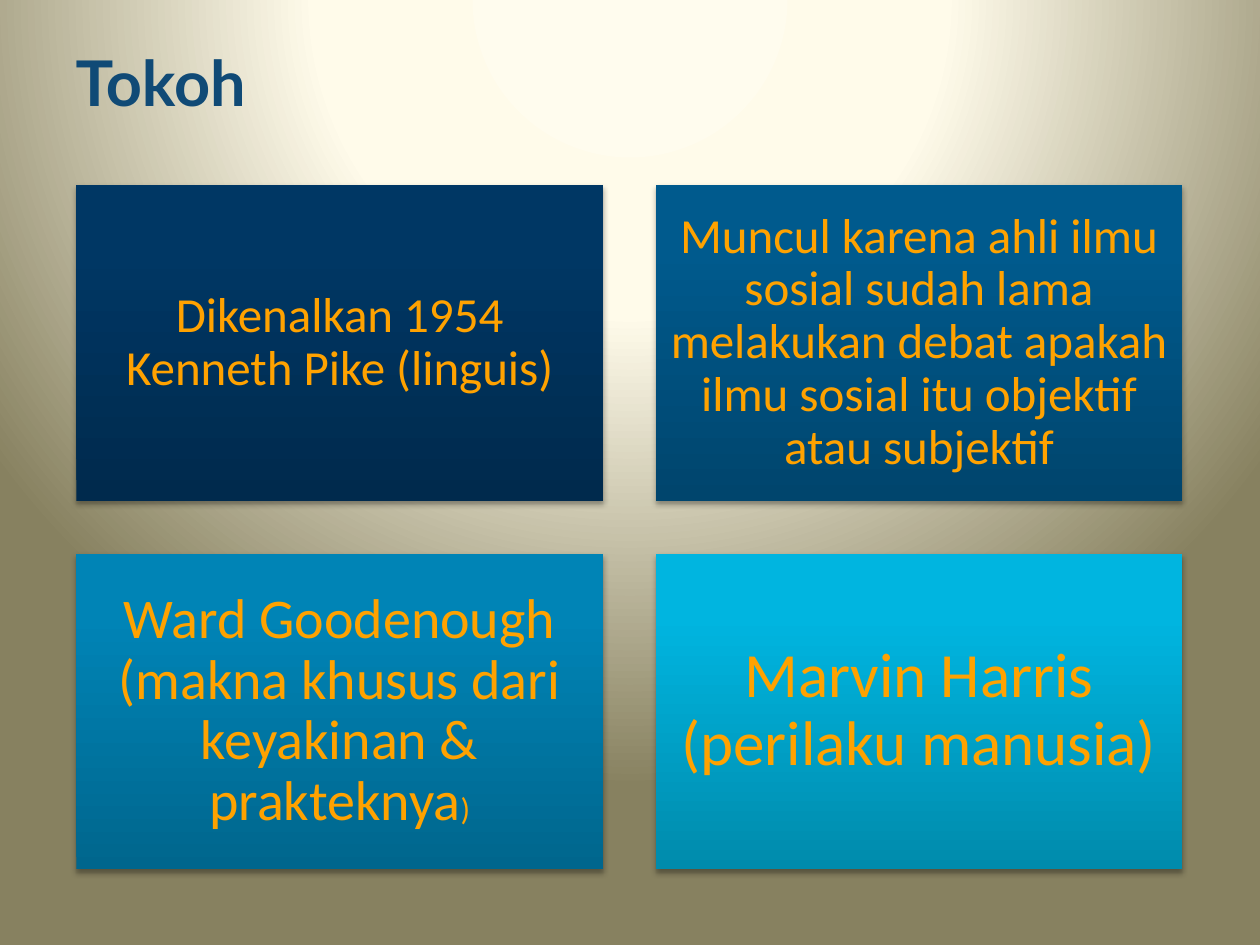
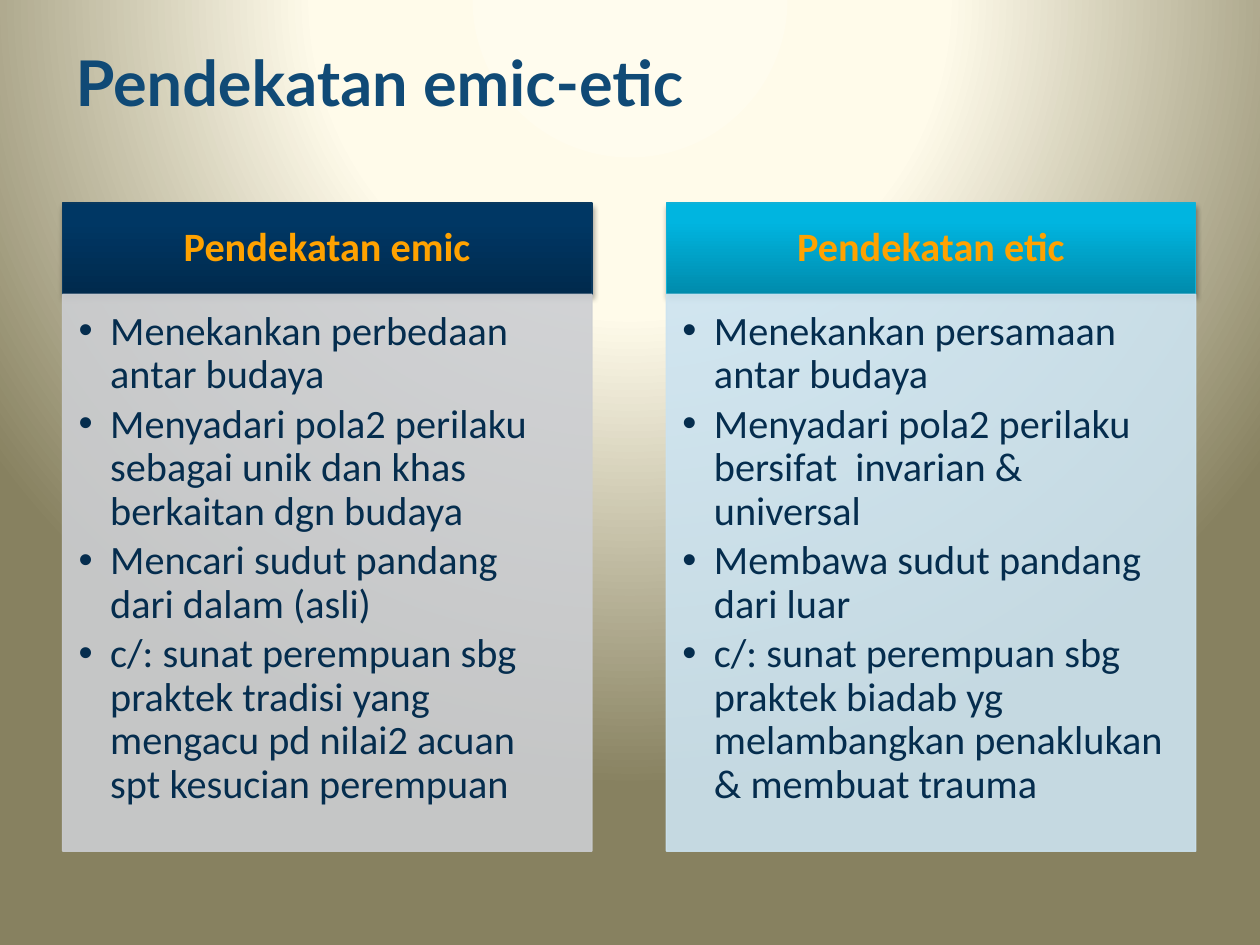
from dataclasses import dataclass
from itertools import product
from typing import Any

from lxml import etree
from pptx import Presentation
from pptx import util as u
from pptx.dml.color import RGBColor
from pptx.enum import shapes, text
from pptx.oxml.ns import qn

NAVY = ((0, "002A4D"), (80, "003764"), (100, "003764"))
BLUE = ((0, "00456D"), (80, "005A8D"), (100, "005B8E"))
AZURE = ((0, "00668D"), (80, "0084B6"), (100, "0085B7"))
CYAN = ((0, "008BAC"), (80, "00B5E0"), (100, "00B6E1"))
GLOW = ((0, "FFFCEE"), (40, "FFFBEA"), (100, "878160"))
ORANGE, INK, TITLE_BLUE = "FFA200", "052D4E", "104A76"
BODY_SIZE = 23
Stops = tuple[tuple[int, str], ...]


@dataclass
class Frame:
    left: float
    top: float
    width: float
    height: float


@dataclass
class Figure:
    phrases: tuple[tuple[str, int], ...]
    shade: Stops


@dataclass
class Approach:
    heading: str
    shade: Stops
    edge: str
    panel: str
    points: tuple[str, ...]


FIGURES = (
    Figure((("Dikenalkan 1954 Kenneth Pike (linguis)", 28),), NAVY),
    Figure((("Muncul karena ahli ilmu sosial sudah lama melakukan debat "
             "apakah ilmu sosial itu objektif atau subjektif", 28),), BLUE),
    Figure((("Ward Goodenough (makna khusus dari keyakinan & prakteknya", 32),
            (")", 18)), AZURE),
    Figure((("Marvin Harris (perilaku manusia)", 36),), CYAN),
)
APPROACHES = (
    Approach("Pendekatan emic", NAVY, "09385E", "CCCED2", (
        "Menekankan perbedaan antar budaya",
        "Menyadari pola2 perilaku sebagai unik dan khas berkaitan dgn budaya",
        "Mencari sudut pandang dari dalam (asli)",
        "c/: sunat perempuan sbg praktek tradisi yang mengacu pd nilai2 acuan "
        "spt kesucian perempuan")),
    Approach("Pendekatan etic", CYAN, "10B1D7", "CCE3F0", (
        "Menekankan persamaan antar budaya",
        "Menyadari pola2 perilaku bersifat  invarian & universal",
        "Membawa sudut pandang dari luar",
        "c/: sunat perempuan sbg praktek biadab yg melambangkan penaklukan "
        "& membuat trauma")),
)


def color(value: str) -> RGBColor:
    return RGBColor.from_string(value)


def assign(target: Any, values: dict[str, Any]) -> None:
    for name, value in values.items():
        setattr(target, name, value)


def add_node(parent: Any, tag: str, **attributes: Any) -> Any:
    return etree.SubElement(parent, qn(tag), {k: str(v) for k, v in attributes.items()})


def fill_gradient(fill: Any, owner: Any, stops: Stops) -> Any:
    fill.gradient()
    gradient = next(owner.iter(qn("a:gradFill")))
    for child in list(gradient):
        gradient.remove(child)
    stop_list = add_node(gradient, "a:gsLst")
    for position, value in stops:
        stop = add_node(stop_list, "a:gs", pos=position * 1000)
        add_node(stop, "a:srgbClr", val=str(color(value)))
    return gradient


def light_master(master: Any) -> None:
    gradient = fill_gradient(master.background.fill, master.element, GLOW)
    circle = add_node(gradient, "a:path", path="circle")
    add_node(circle, "a:fillToRect", l=50000, t=-80000, r=50000, b=180000)


def add_titled_slide(deck: Any, heading: str) -> Any:
    slide = deck.slides.add_slide(deck.slide_layouts[5])
    title = slide.shapes.title
    assign(title, {"left": u.Pt(36), "top": u.Pt(4.5), "width": u.Pt(648), "height": u.Pt(84)})
    assign(title.text_frame, {"text": heading, "word_wrap": True,
                              "auto_size": text.MSO_AUTO_SIZE.NONE,
                              "vertical_anchor": text.MSO_ANCHOR.MIDDLE})
    title.text_frame.paragraphs[0].alignment = text.PP_ALIGN.LEFT
    style_font(title.text_frame.paragraphs[0].runs[0].font, 36, TITLE_BLUE, True, "Lato")
    return slide


def style_font(font: Any, size: float, value: str, bold: bool = False,
               face: str = "Calibri") -> None:
    assign(font, {"name": face, "size": u.Pt(size), "bold": bold})
    font.color.rgb = color(value)


def add_box(slide: Any, frame: Frame, insets: tuple[float, float, float, float],
            anchor: Any) -> Any:
    box = slide.shapes.add_shape(
        shapes.MSO_SHAPE.RECTANGLE, u.Pt(frame.left), u.Pt(frame.top),
        u.Pt(frame.width), u.Pt(frame.height))
    box.shadow.inherit = False
    sides = ("margin_left", "margin_top", "margin_right", "margin_bottom")
    assign(box.text_frame, {side: u.Pt(inset) for side, inset in zip(sides, insets)})
    assign(box.text_frame, {"word_wrap": True, "vertical_anchor": anchor})
    return box


def add_shaded_box(slide: Any, frame: Frame, shade: Stops,
                   phrases: tuple[tuple[str, int], ...],
                   insets: tuple[float, float, float, float], bold: bool = False) -> Any:
    box = add_box(slide, frame, insets, text.MSO_ANCHOR.MIDDLE)
    properties = box._element.spPr
    gradient = fill_gradient(box.fill, properties, shade)
    add_node(gradient, "a:lin", ang=16200000, scaled=0)
    shadow = add_node(properties.find(qn("a:effectLst")), "a:outerShdw",
                      blurRad=u.Pt(3.1), dist=u.Pt(1.8), dir=5400000, rotWithShape=0)
    add_node(add_node(shadow, "a:srgbClr", val="000000"), "a:alpha", val=35000)
    box.line.fill.background()
    paragraph = box.text_frame.paragraphs[0]
    assign(paragraph, {"alignment": text.PP_ALIGN.CENTER, "line_spacing": 0.9})
    for phrase, size in phrases:
        run = paragraph.add_run()
        run.text = phrase
        style_font(run.font, size, ORANGE, bold)
    return box


def outline(box: Any, value: str) -> None:
    box.line.color.rgb = color(value)
    box.line.width = u.Pt(0.75)


def add_points_panel(slide: Any, frame: Frame, approach: Approach) -> None:
    panel = add_box(slide, frame, (9.2, 9.2, 12.3, 13.8), text.MSO_ANCHOR.TOP)
    panel.fill.solid()
    panel.fill.fore_color.rgb = color(approach.panel)
    outline(panel, approach.panel)
    for tint in panel._element.spPr.iter(qn("a:srgbClr")):
        add_node(tint, "a:alpha", val=90000)
    frame_text = panel.text_frame
    for index, point in enumerate(approach.points):
        paragraph = frame_text.add_paragraph() if index else frame_text.paragraphs[0]
        paragraph.text = point
        assign(paragraph, {"alignment": text.PP_ALIGN.LEFT, "line_spacing": 0.9,
                           "space_after": u.Pt(3.5)})
        settings = paragraph._p.get_or_add_pPr()
        settings.set("marL", str(u.Pt(18)))
        settings.set("indent", str(u.Pt(-18)))
        add_node(settings, "a:buFont", typeface="Arial")
        add_node(settings, "a:buChar", char="•")
        style_font(paragraph.runs[0].font, BODY_SIZE, INK)


def build_figures(deck: Any) -> None:
    slide = add_titled_slide(deck, "Tokoh")
    width, height, gap = 301, 180.6, 30
    for (row, column), figure in zip(product(range(2), repeat=2), FIGURES):
        frame = Frame(43.6 + column * (width + gap), 105.7 + row * (height + gap),
                      width, height)
        inset = 0.3 * figure.phrases[0][1]
        add_shaded_box(slide, frame, figure.shade, figure.phrases, (inset,) * 4)


def build_approaches(deck: Any) -> None:
    slide = add_titled_slide(deck, "Pendekatan emic-etic")
    width, pitch, top, heading_height = 302.5, 345, 116, 52.2
    for column, approach in enumerate(APPROACHES):
        left = 35.8 + column * pitch
        heading = add_shaded_box(
            slide, Frame(left, top, width, heading_height), approach.shade,
            ((approach.heading, BODY_SIZE),), (13, 7.5, 13, 7.5), True)
        outline(heading, approach.edge)
        add_points_panel(slide, Frame(left, top + heading_height, width, 318.2), approach)


def main() -> None:
    deck = Presentation()
    deck.slide_width, deck.slide_height = u.Pt(720), u.Pt(540)
    light_master(deck.slide_master)
    build_figures(deck)
    build_approaches(deck)
    deck.save("out.pptx")


if __name__ == "__main__":
    main()
